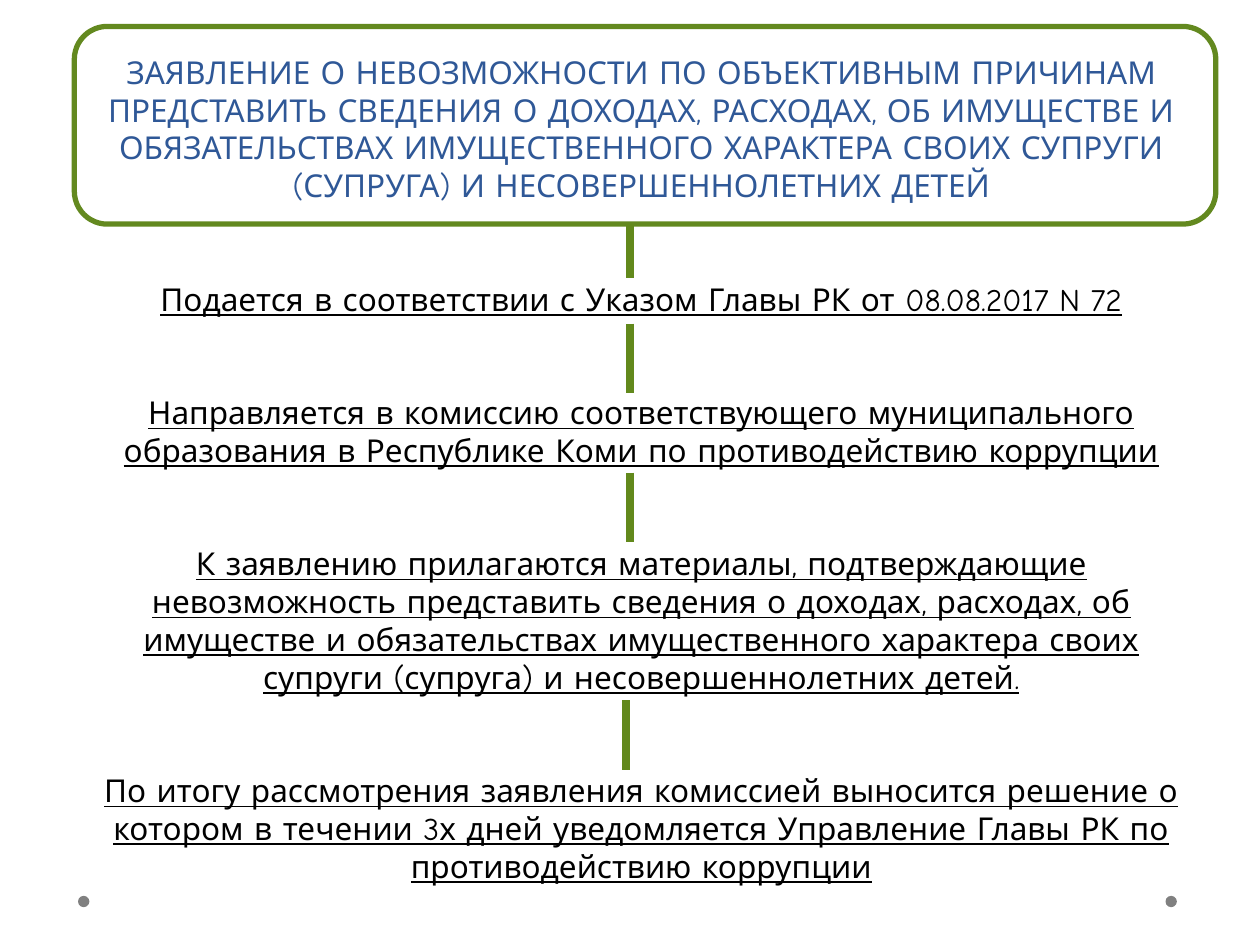
from pptx import Presentation
from pptx.dml.color import RGBColor
from pptx.enum import shapes, text
from pptx.oxml.ns import qn
from pptx.util import Pt
from lxml import etree

FONT = "Comic Neue"
LINE_PITCH = 21.6
HEADING = (
    "ЗАЯВЛЕНИЕ О НЕВОЗМОЖНОСТИ ПО ОБЪЕКТИВНЫМ ПРИЧИНАМ ПРЕДСТАВИТЬ СВЕДЕНИЯ "
    "О ДОХОДАХ, РАСХОДАХ, ОБ ИМУЩЕСТВЕ И ОБЯЗАТЕЛЬСТВАХ ИМУЩЕСТВЕННОГО "
    "ХАРАКТЕРА СВОИХ СУПРУГИ (СУПРУГА) И НЕСОВЕРШЕННОЛЕТНИХ ДЕТЕЙ"
)
STEPS = [
    "Подается в соответствии с Указом Главы РК от 08.08.2017 N 72",
    "Направляется в комиссию соответствующего муниципального образования "
    "в Республике Коми по противодействию коррупции",
    "К заявлению прилагаются материалы, подтверждающие невозможность "
    "представить сведения о доходах, расходах, об имуществе и обязательствах "
    "имущественного характера своих супруги (супруга) и несовершеннолетних детей.",
    "По итогу рассмотрения заявления комиссией выносится решение о котором "
    "в течении 3х дней уведомляется Управление Главы РК по противодействию коррупции",
]
LINKS = [(360, 128.2, 159.1), (360, 185, 224.6), (360, 270, 309.6), (357.8, 400.3, 439.9)]


def color(value):
    return RGBColor.from_string(value)


def add_filled(slide, preset, left, top, width, height, fill):
    shape = slide.shapes.add_shape(preset, Pt(left), Pt(top), Pt(width), Pt(height))
    shape.shadow.inherit = False
    shape.fill.solid()
    shape.fill.fore_color.rgb = color(fill)
    shape.line.fill.background()
    return shape


def add_heading_panel(slide):
    panel = add_filled(
        slide, shapes.MSO_SHAPE.ROUNDED_RECTANGLE, 42.5, 15.1, 652.3, 113, "FFFFFF"
    )
    panel.line.color.rgb = color("63891F")
    panel.line.width = Pt(3)
    return panel


def add_link(slide, x, top, bottom):
    link = slide.shapes.add_connector(
        shapes.MSO_CONNECTOR.STRAIGHT, Pt(x), Pt(top), Pt(x), Pt(bottom)
    )
    link.line.color.rgb = color("62891C")
    link.line.width = Pt(4.5)
    etree.SubElement(link.element.spPr, qn("a:effectLst"))


def format_paragraph(paragraph, ink, underline=False, gap=0):
    paragraph.alignment = text.PP_ALIGN.CENTER
    paragraph.line_spacing = Pt(LINE_PITCH)
    paragraph.space_before = Pt(gap)
    paragraph.font.name = FONT
    paragraph.font.size = Pt(18)
    paragraph.font.color.rgb = color(ink)
    paragraph.font.underline = underline


def fill_title(slide):
    title = slide.shapes.title
    title.left, title.top, title.width, title.height = Pt(42.5), Pt(26), Pt(648), Pt(483)
    frame = title.text_frame
    frame.word_wrap = True
    frame.auto_size = text.MSO_AUTO_SIZE.NONE
    frame.vertical_anchor = text.MSO_ANCHOR.BOTTOM
    heading = frame.paragraphs[0]
    heading.text = HEADING
    format_paragraph(heading, "2F5897")
    for step in STEPS:
        paragraph = frame.add_paragraph()
        paragraph.text = step
        format_paragraph(paragraph, "000000", underline=True, gap=2 * LINE_PITCH)
    return title


def main():
    deck = Presentation()
    deck.slide_width, deck.slide_height = Pt(720), Pt(540)
    slide = deck.slides.add_slide(deck.slide_layouts[5])
    for left in (666, 44.6):
        add_filled(slide, shapes.MSO_SHAPE.OVAL, left, 511.9, 6.5, 6.5, "808080")
    panel = add_heading_panel(slide)
    title = fill_title(slide)
    panel.element.addnext(title.element)
    for x, top, bottom in LINKS:
        add_link(slide, x, top, bottom)
    deck.save("out.pptx")


if __name__ == "__main__":
    main()
